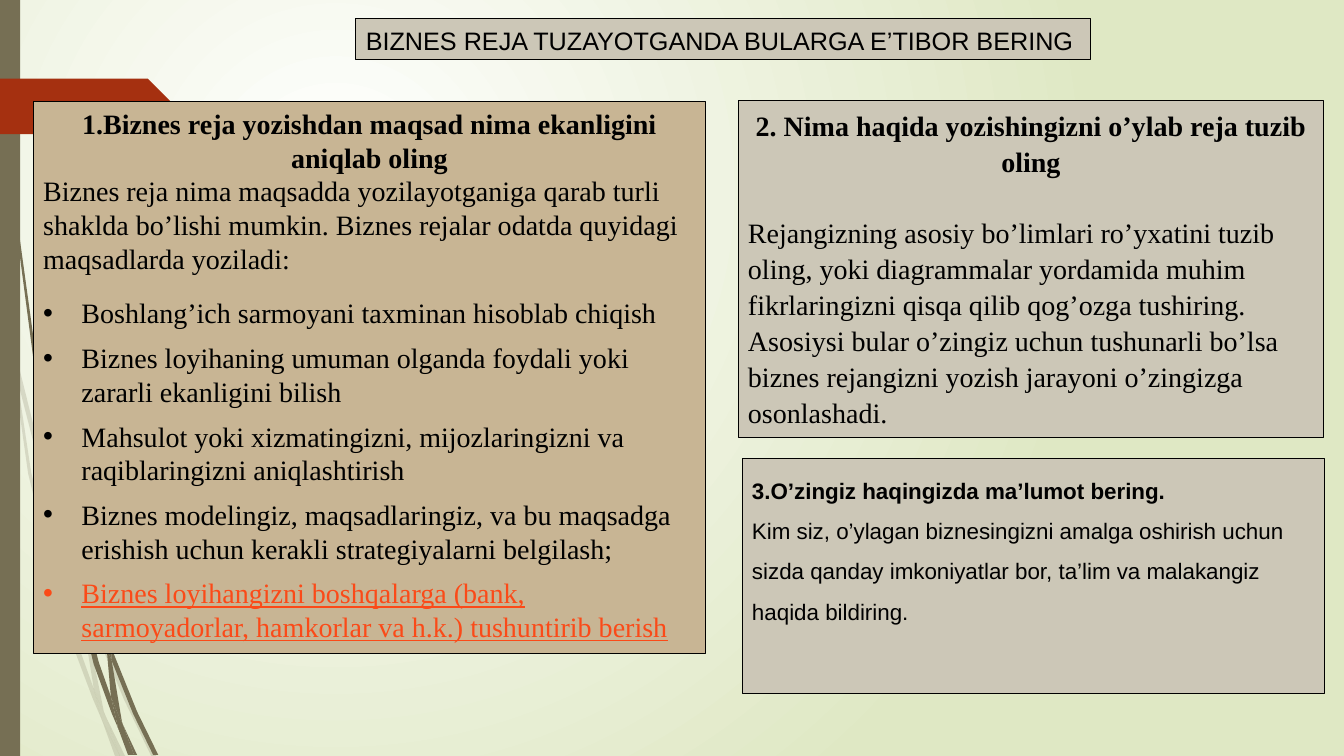
from dataclasses import dataclass

from lxml import etree
from pptx import Presentation
from pptx.dml.color import RGBColor
from pptx.enum.shapes import MSO_SHAPE
from pptx.enum.text import MSO_ANCHOR, PP_ALIGN
from pptx.oxml.ns import qn
from pptx.util import Inches, Pt

RECTANGLE = MSO_SHAPE.RECTANGLE
ARROW_TAB = MSO_SHAPE.PENTAGON
TOP = MSO_ANCHOR.TOP
LEFT, CENTER = PP_ALIGN.LEFT, PP_ALIGN.CENTER

COLORS = {
    "white": "FFFFFF", "pale green": "DFE8C4", "olive": "766F54", "rust": "A53010",
    "grey": "CCC7B7", "tan": "C8B594", "black": "000000", "orange": "FB4A18",
}
SERIF, SANS = "Times New Roman", "Arial"
BULLET_INDENT = Inches(0.38)
HUNDREDTH = Inches(0.01)

# Outlines in hundredths of an inch
FAINT_STEMS = [
    [(11, 350), (9, 322), (0, 282), (0, 299), (10, 344)],
    [(58, 522), (84, 599), (85, 586), (62, 520), (36, 433), (14, 345), (17, 376), (36, 450)],
    [(92, 607), (88, 596), (88, 610), (123, 694), (150, 750), (155, 750), (127, 692)],
    [(119, 750), (124, 750), (105, 711)],
    [(93, 683), (70, 619), (31, 469), (17, 376), (11, 350), (28, 470), (65, 621),
     (92, 693), (101, 714), (99, 707)],
    [(84, 599), (87, 646), (93, 683), (96, 692), (105, 711), (103, 706), (91, 646),
     (88, 610), (88, 608)],
    [(101, 714), (114, 750), (119, 750)],
    [(96, 692), (93, 683), (99, 707), (101, 714), (119, 750), (105, 711)],
]
DARK_STEMS = [
    [(7, 110), (17, 233), (33, 355), (56, 477), (57, 481), (55, 457), (55, 453),
     (36, 355), (19, 232), (8, 109), (5, 48), (4, 0), (3, 0), (4, 48)],
    [(113, 649), (110, 641), (111, 656), (132, 708), (152, 749), (157, 749), (136, 706)],
    [(110, 691), (98, 657), (72, 556), (64, 505), (57, 477), (68, 557), (93, 659),
     (111, 708), (117, 722), (116, 717)],
    [(133, 749), (136, 749), (122, 719)],
    [(117, 722), (127, 749), (131, 749)],
    [(106, 645), (110, 691), (116, 706), (122, 719), (121, 716), (111, 656), (109, 651)],
    [(106, 645), (109, 651), (111, 656), (110, 641), (106, 631)],
    [(116, 706), (110, 691), (116, 717), (117, 722), (130, 749), (133, 749), (122, 719)],
]


@dataclass
class Line:
    text: str
    bold: bool = False
    align: PP_ALIGN = LEFT
    space_after: float = 0
    bullet: bool = False
    color: str = "black"
    underline: bool = False


@dataclass
class Panel:
    left: float
    top: float
    width: float
    height: float
    fill: str
    font: str
    size: int
    line_spacing: float
    lines: list[Line]


PANELS = [
    Panel(3.53, 0.18, 7.29, 0.41, "grey", SANS, 18, 1.07, [
        Line("BIZNES REJA TUZAYOTGANDA BULARGA E’TIBOR BERING"),
    ]),
    Panel(0.33, 1.01, 6.67, 5.47, "tan", SERIF, 20, 1, [
        Line("1.Biznes reja yozishdan maqsad nima ekanligini aniqlab oling", True, CENTER),
        Line("Biznes reja nima maqsadda yozilayotganiga qarab turli shaklda bo’lishi mumkin. "
             "Biznes rejalar odatda quyidagi maqsadlarda yoziladi:", space_after=15),
        Line("Boshlang’ich sarmoyani taxminan hisoblab chiqish", space_after=8, bullet=True),
        Line("Biznes loyihaning umuman olganda foydali yoki zararli ekanligini bilish",
             space_after=8, bullet=True),
        Line("Mahsulot yoki xizmatingizni, mijozlaringizni va raqiblaringizni aniqlashtirish",
             space_after=8, bullet=True),
        Line("Biznes modelingiz, maqsadlaringiz, va bu maqsadga erishish uchun kerakli "
             "strategiyalarni belgilash;", space_after=8, bullet=True),
        Line("Biznes loyihangizni boshqalarga (bank, sarmoyadorlar, hamkorlar va h.k.) "
             "tushuntirib berish", space_after=8, bullet=True, color="orange", underline=True),
    ]),
    Panel(7.32, 1, 5.81, 3.34, "grey", SERIF, 20, 1.07, [
        Line("2. Nima haqida yozishingizni o’ylab reja tuzib oling", True, CENTER, 25.6),
        Line("Rejangizning asosiy bo’limlari ro’yxatini tuzib oling, yoki diagrammalar yordamida "
             "muhim fikrlaringizni qisqa qilib qog’ozga tushiring. Asosiysi bular o’zingiz uchun "
             "tushunarli bo’lsa biznes rejangizni yozish jarayoni o’zingizga osonlashadi."),
    ]),
    Panel(7.36, 4.55, 5.78, 2.33, "grey", SANS, 16, 1.5, [
        Line("3.O’zingiz haqingizda ma’lumot bering.", True),
        Line("Kim siz, o’ylagan biznesingizni amalga oshirish uchun sizda qanday imkoniyatlar "
             "bor, ta’lim va malakangiz haqida bildiring."),
    ]),
]


def rgb(name: str) -> RGBColor:
    return RGBColor.from_string(COLORS[name])


def paint_background(slide) -> None:
    """Radial gradient centred in the upper left quarter."""
    fill = slide.background.fill
    fill.gradient()
    for stop, color in zip(fill.gradient_stops, ("white", "pale green")):
        stop.color.rgb = rgb(color)
    gradient = slide.element.find(".//" + qn("a:gradFill"))
    linear = gradient.find(qn("a:lin"))
    radial = etree.Element(qn("a:path"), path="circle")
    etree.SubElement(radial, qn("a:fillToRect"), l="50000", t="50000", r="100000", b="100000")
    gradient.replace(linear, radial)


def fill_plain(shape, color: str) -> None:
    shape.shadow.inherit = False
    shape.fill.solid()
    shape.fill.fore_color.rgb = rgb(color)
    shape.line.fill.background()


def add_block(slide, kind: MSO_SHAPE, left: float, top: float, width: float, height: float,
              color: str):
    shape = slide.shapes.add_shape(kind, Inches(left), Inches(top), Inches(width), Inches(height))
    fill_plain(shape, color)
    return shape


def add_stem(slide, points: list[tuple[int, int]], opacity: int = 100) -> None:
    builder = slide.shapes.build_freeform(*points[0], scale=HUNDREDTH)
    builder.add_line_segments(points[1:], close=True)
    shape = builder.convert_to_shape()
    fill_plain(shape, "olive")
    if opacity < 100:
        color = shape.element.spPr.find(qn("a:solidFill"))[0]
        etree.SubElement(color, qn("a:alpha"), val=str(opacity * 1000))


def add_bullet(paragraph) -> None:
    properties = paragraph._p.get_or_add_pPr()
    properties.set("marL", str(BULLET_INDENT))
    properties.set("indent", str(-BULLET_INDENT))
    etree.SubElement(properties, qn("a:buFont"), typeface=SANS)
    etree.SubElement(properties, qn("a:buChar"), char="•")


def add_panel(slide, panel: Panel) -> None:
    shape = add_block(slide, RECTANGLE, panel.left, panel.top, panel.width, panel.height,
                      panel.fill)
    shape.line.color.rgb = rgb("black")
    shape.line.width = Pt(0.75)
    frame = shape.text_frame
    frame.word_wrap = True
    frame.vertical_anchor = TOP
    frame.text = "\n".join(line.text for line in panel.lines)
    for paragraph, line in zip(frame.paragraphs, panel.lines):
        paragraph.alignment = line.align
        paragraph.line_spacing = panel.line_spacing
        paragraph.space_after = Pt(line.space_after)
        if line.bullet:
            add_bullet(paragraph)
        font = paragraph.runs[0].font
        font.name = panel.font
        font.size = Pt(panel.size)
        font.bold = line.bold
        font.underline = line.underline
        font.color.rgb = rgb(line.color)


def main() -> None:
    presentation = Presentation()
    presentation.slide_width = Inches(13.33)
    presentation.slide_height = Inches(7.5)
    slide = presentation.slides.add_slide(presentation.slide_layouts[6])
    paint_background(slide)
    for points in FAINT_STEMS:
        add_stem(slide, points, opacity=20)
    for points in DARK_STEMS:
        add_stem(slide, points)
    add_block(slide, RECTANGLE, 0, 0, 0.2, 7.5, "olive")
    add_block(slide, ARROW_TAB, 0, 0.78, 1.74, 0.55, "rust")
    for panel in PANELS:
        add_panel(slide, panel)
    presentation.save("out.pptx")


if __name__ == "__main__":
    main()
